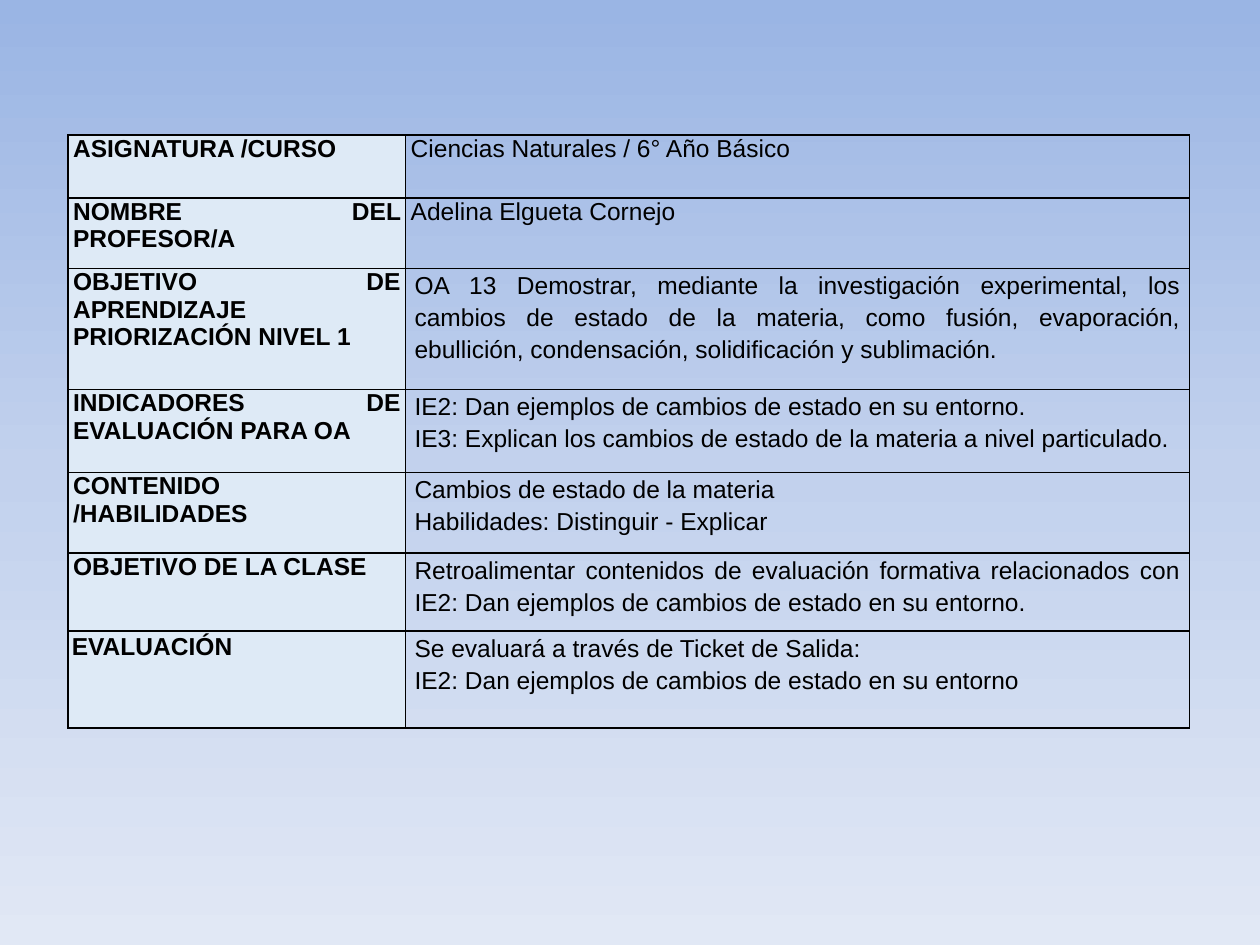
from lxml.etree import SubElement
from pptx import Presentation
from pptx.dml.color import RGBColor
from pptx.enum.text import PP_ALIGN
from pptx.oxml import parse_xml
from pptx.oxml.ns import nsdecls, qn
from pptx.util import Inches, Pt

INK, TINT = "000000", "DEEAF6"
SKY = [(0, "9AB5E4"), (50, "C2D1ED"), (100, "E1E8F5")]
COLS = [2.68, 6.22]
ROWS = [
    (0.5, "ASIGNATURA /CURSO", "Ciencias Naturales / 6° Año Básico"),
    (0.56, "NOMBRE DEL PROFESOR/A", "Adelina Elgueta Cornejo"),
    (0.96, "OBJETIVO DE APRENDIZAJE PRIORIZACIÓN NIVEL 1",
     "OA 13 Demostrar, mediante la investigación experimental, los cambios de "
     "estado de la materia, como fusión, evaporación, ebullición, condensación, "
     "solidificación y sublimación."),
    (0.66, "INDICADORES DE EVALUACIÓN PARA OA",
     "IE2: Dan ejemplos de cambios de estado en su entorno.\n"
     "IE3: Explican los cambios de estado de la materia a nivel particulado."),
    (0.64, "CONTENIDO /HABILIDADES",
     "Cambios de estado de la materia\nHabilidades: Distinguir - Explicar"),
    (0.62, "OBJETIVO DE LA CLASE",
     "Retroalimentar contenidos de evaluación formativa relacionados con "
     "IE2: Dan ejemplos de cambios de estado en su entorno."),
    (0.77, "EVALUACIÓN",
     "Se evaluará a través de Ticket de Salida:\n"
     "IE2: Dan ejemplos de cambios de estado en su entorno"),
]


def color(code):
    return RGBColor.from_string(code)


class Page:
    """Hold the style and the current slide, and draw each kind of element."""

    def __init__(self, deck, font="Arial", size=14):
        self.slide = deck.slides.add_slide(deck.slide_layouts[6])
        self.font, self.size = font, size

    def backdrop(self, stops):
        fill = self.slide.background.fill
        fill.gradient()
        grad = self.slide.background._cSld.bg.bgPr.find(qn("a:gradFill"))
        for kid in list(grad):
            grad.remove(kid)
        group = SubElement(grad, qn("a:gsLst"))
        for place, code in stops:
            stop = SubElement(group, qn("a:gs"), pos=str(place * 1000))
            SubElement(stop, qn("a:srgbClr"), val=code)
        SubElement(grad, qn("a:lin"), ang="5400000", scaled="0")

    def table(self, left, top, cols, rows):
        high = sum(row[0] for row in rows)
        frame = self.slide.shapes.add_table(
            len(rows), len(cols), Inches(left), Inches(top),
            Inches(sum(cols)), Inches(high))
        grid = frame.table
        grid.first_row = grid.horz_banding = False
        for col, wide in zip(grid.columns, cols):
            col.width = Inches(wide)
        for num, (tall, label, text) in enumerate(rows):
            grid.rows[num].height = Inches(tall)
            last = num == len(rows) - 1
            self.cell(grid.cell(num, 0), label, pad=0.03 if last else 0.04,
                      rise=0.02 if last else 0, bold=True, fill=TINT)
            if num < 2:
                self.cell(grid.cell(num, 1), text)
            else:
                self.cell(grid.cell(num, 1), text, pad=0.07, space=1.15)

    def cell(self, cell, text, pad=0.04, rise=0, space=1, bold=False, fill=None):
        cell.margin_left = cell.margin_right = Inches(pad)
        cell.margin_top = cell.margin_bottom = Inches(rise)
        cell.text_frame.text = text
        for para in cell.text_frame.paragraphs:
            para.alignment = PP_ALIGN.JUSTIFY
            para.line_spacing = space
            for run in para.runs:
                run.font.name, run.font.size = self.font, Pt(self.size)
                run.font.bold = bold
                run.font.color.rgb = color(INK)
        if fill:
            cell.fill.solid()
            cell.fill.fore_color.rgb = color(fill)
        else:
            cell.fill.background()
        self.border(cell)

    def border(self, cell):
        props = cell._tc.get_or_add_tcPr()
        for spot, side in enumerate("LRTB"):
            props.insert(spot, parse_xml(
                f'<a:ln{side} {nsdecls("a")} w="{Pt(1)}"><a:solidFill>'
                f'<a:srgbClr val="{INK}"/></a:solidFill></a:ln{side}>'))


def main():
    deck = Presentation()
    deck.slide_width, deck.slide_height = Inches(10), Inches(7.5)
    page = Page(deck)
    page.backdrop(SKY)
    page.table(0.54, 1.07, COLS, ROWS)
    deck.save("out.pptx")


if __name__ == "__main__":
    main()
